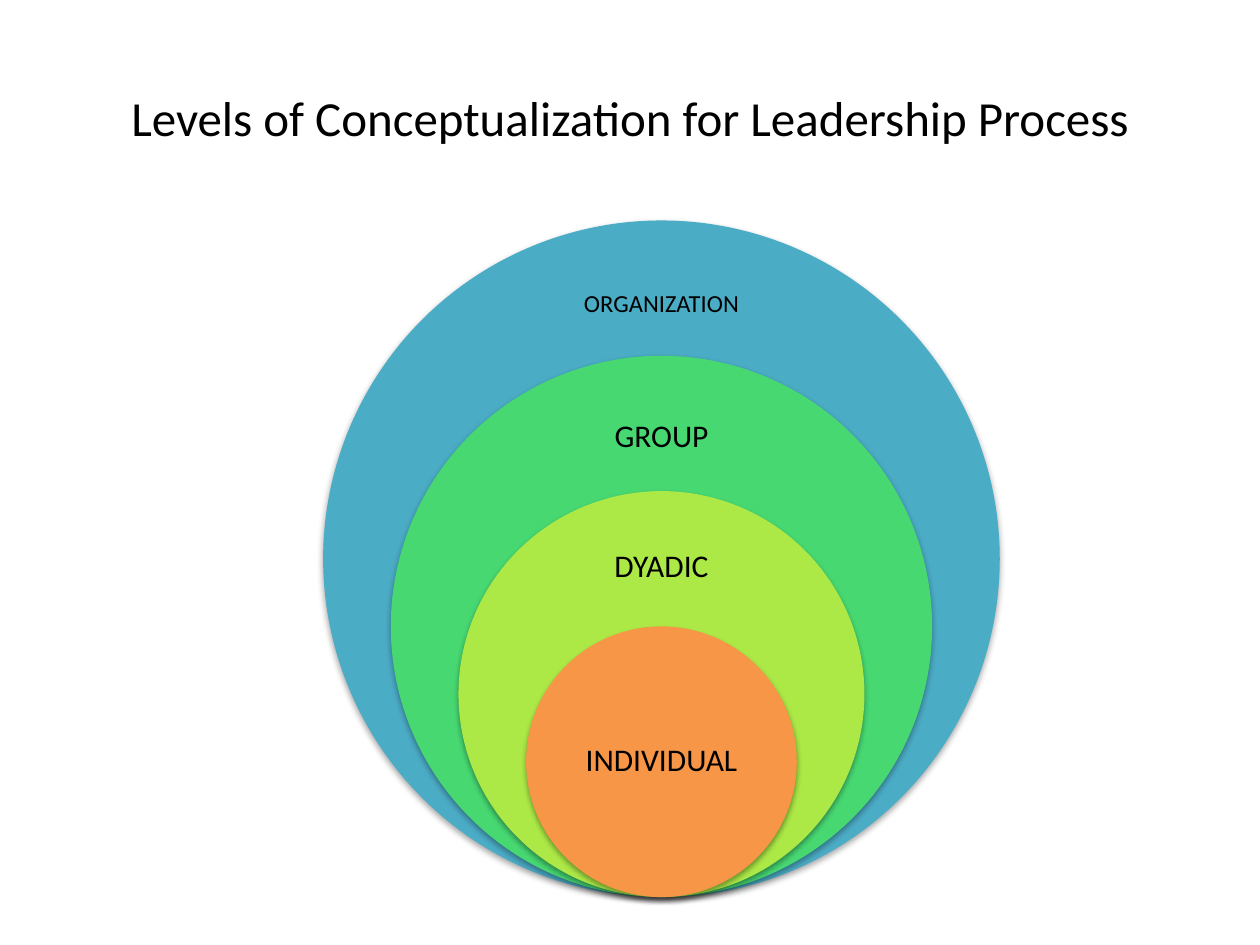
"""Build a slide of nested circles showing the levels of the leadership process."""
from lxml import etree
from pptx import Presentation
from pptx.dml.color import RGBColor
from pptx.enum.shapes import MSO_SHAPE
from pptx.enum.text import MSO_ANCHOR, PP_ALIGN
from pptx.oxml import parse_xml
from pptx.util import Inches, Pt

OVAL = MSO_SHAPE.OVAL
MIDDLE = MSO_ANCHOR.MIDDLE
CENTER = PP_ALIGN.CENTER
BLACK = RGBColor(0x00, 0x00, 0x00)
BLUE = RGBColor(0x4B, 0xAC, 0xC6)
GREEN = RGBColor(0x47, 0xD8, 0x72)
LIME = RGBColor(0xAC, 0xE9, 0x46)
ORANGE = RGBColor(0xF7, 0x96, 0x46)

TITLE = "Levels of Conceptualization for Leadership Process"
# name, colour, text size, inset, label centre below circle top, label height
LEVELS = [
    ("ORGANIZATION", BLUE, 14, 0.11, 0.67, 0.80),
    ("GROUP", GREEN, 18, 0.14, 0.65, 0.77),
    ("DYADIC", LIME, 18, 0.14, 0.60, 0.72),
    ("INDIVIDUAL", ORANGE, 18, 0.14, 1.07, 1.07),
]
CENTER_X, BOTTOM, OUTER = 5.25, 7.12, 5.37
STEP = OUTER / 5
LABEL_WIDTH = 1.52

SHADOW = (
    '<a:effectLst xmlns:a="http://schemas.openxmlformats.org/drawingml/2006/main">'
    '<a:outerShdw blurRad="40000" dist="23000" dir="5400000" rotWithShape="0">'
    '<a:srgbClr val="000000"><a:alpha val="35000"/></a:srgbClr>'
    '</a:outerShdw></a:effectLst>'
)


def write(frame, text, size):
    frame.word_wrap = True
    frame.vertical_anchor = MIDDLE
    paragraph = frame.paragraphs[0]
    paragraph.alignment = CENTER
    run = paragraph.add_run()
    run.text = text
    run.font.name = "Calibri"
    run.font.size = Pt(size)
    run.font.color.rgb = BLACK
    return paragraph


def add_circle(slide, top, diameter, color):
    circle = slide.shapes.add_shape(
        OVAL, Inches(CENTER_X - diameter / 2), Inches(top),
        Inches(diameter), Inches(diameter))
    circle.fill.solid()
    circle.fill.fore_color.rgb = color
    circle.line.fill.background()
    circle.element.spPr.append(parse_xml(SHADOW))


def add_label(slide, middle, height, name, size, inset):
    label = slide.shapes.add_textbox(
        Inches(CENTER_X - LABEL_WIDTH / 2), Inches(middle - height / 2),
        Inches(LABEL_WIDTH), Inches(height))
    frame = label.text_frame
    frame.margin_left = frame.margin_right = Inches(inset)
    frame.margin_top = frame.margin_bottom = Inches(inset)
    write(frame, name, size).line_spacing = 0.9


def main():
    deck = Presentation()
    deck.slide_width, deck.slide_height = Inches(10), Inches(7.5)
    slide = deck.slides.add_slide(deck.slide_layouts[5])
    title = slide.shapes.title
    title.left, title.top = Inches(0.5), Inches(0.3)
    title.width, title.height = Inches(9), Inches(1.25)
    write(title.text_frame, TITLE, 28)

    for level, (name, color, size, inset, drop, height) in enumerate(LEVELS):
        diameter = OUTER - level * STEP
        top = BOTTOM - diameter
        add_circle(slide, top, diameter, color)
        add_label(slide, top + drop, height, name, size, inset)
    deck.save("out.pptx")


if __name__ == "__main__":
    main()
